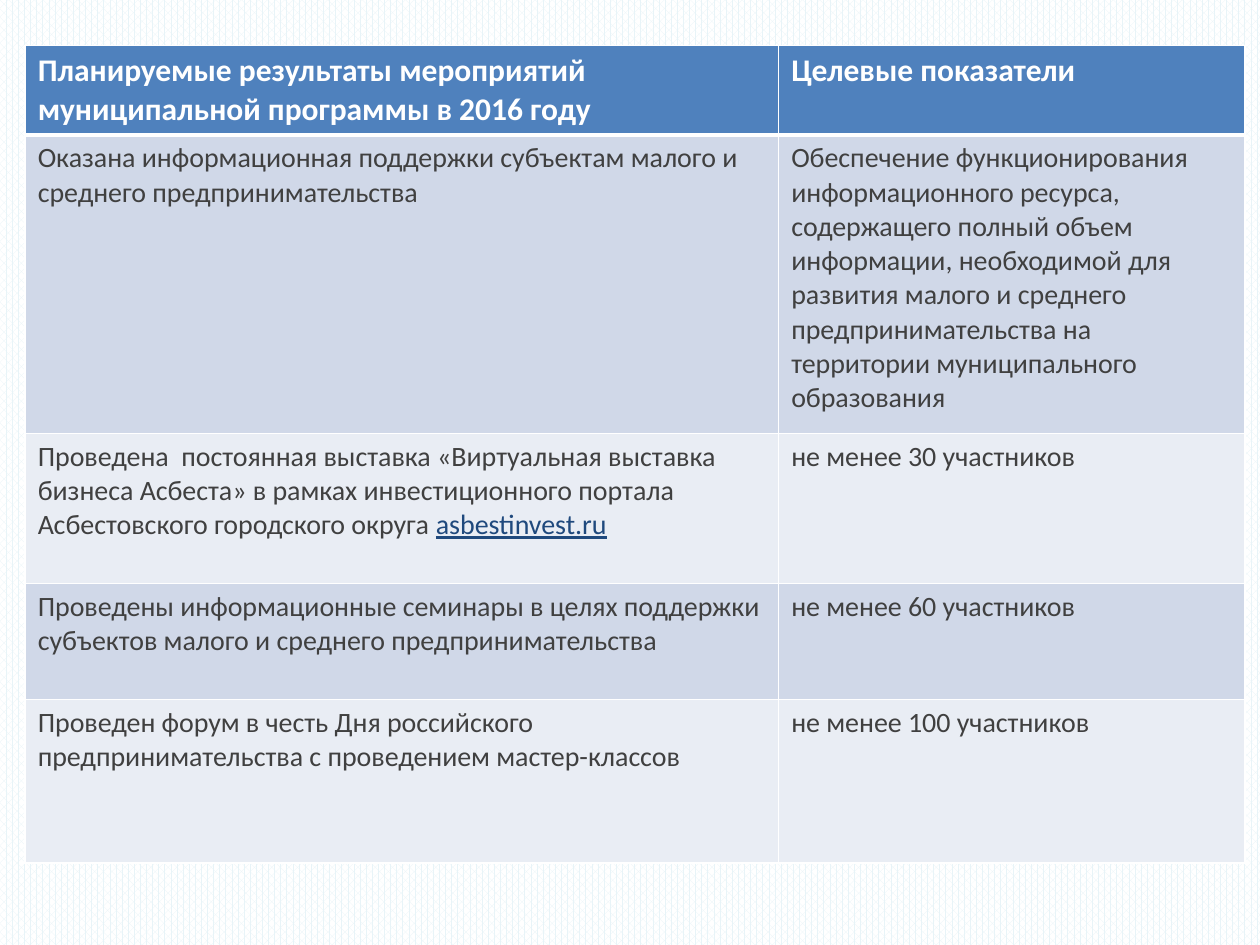
from lxml import etree
from pptx import Presentation
from pptx import util as u
from pptx.dml.color import RGBColor
from pptx.enum import dml
from pptx.oxml import ns

COLORS = {
    "header": "4F81BD", "band_dark": "D0D8E8", "band_light": "E9EDF4",
    "white": "FFFFFF", "body": "404040", "link": "1F497D", "pattern": "E8F4F8",
}
HEADER_FONT = {"name": "Calibri", "size": u.Pt(18), "bold": True}
BODY_FONT = {"name": "Calibri", "size": u.Pt(16), "bold": False}
LINK_FONT = {**BODY_FONT, "underline": True}

COLUMN_WIDTHS = [5.98, 3.7]
ROW_HEIGHTS = [0.7, 2.37, 1.19, 0.92, 1.3]
PORTAL = "asbestinvest.ru"
RESULTS = [
    ("Планируемые результаты мероприятий муниципальной программы в 2016 году",
     "Целевые показатели"),
    ("Оказана информационная поддержки субъектам малого и среднего предпринимательства",
     "Обеспечение функционирования информационного ресурса, содержащего полный объем "
     "информации, необходимой для развития малого и среднего предпринимательства на "
     "территории муниципального образования"),
    ("Проведена  постоянная выставка «Виртуальная выставка бизнеса Асбеста» в рамках "
     "инвестиционного портала Асбестовского городского округа " + PORTAL,
     "не менее 30 участников"),
    ("Проведены информационные семинары в целях поддержки субъектов малого и среднего "
     "предпринимательства", "не менее 60 участников"),
    ("Проведен форум в честь Дня российского предпринимательства с проведением "
     "мастер-классов", "не менее 100 участников"),
]


def rgb(name):
    return RGBColor.from_string(COLORS[name])


def add_run(paragraph, wording, font_format, color):
    run = paragraph.add_run()
    run.text = wording
    for attribute, value in font_format.items():
        setattr(run.font, attribute, value)
    run.font.color.rgb = rgb(color)


def set_borders(cell, widths):
    properties = cell._tc.get_or_add_tcPr()
    for side, width in widths.items():
        line = etree.SubElement(properties, ns.qn(f"a:ln{side}"), w=str(u.Pt(width)))
        fill = etree.SubElement(line, ns.qn("a:solidFill"))
        etree.SubElement(fill, ns.qn("a:srgbClr"), val=COLORS["white"])


def fill_cell(cell, wording, row):
    # White rules, with a thicker one under the header
    set_borders(cell, {"L": 1, "R": 1, "T": 3 if row == 1 else 1, "B": 3 if row == 0 else 1})
    band = "header" if row == 0 else ("band_light", "band_dark")[row % 2]
    cell.fill.solid()
    cell.fill.fore_color.rgb = rgb(band)

    # Wording, with the portal address set apart
    paragraph = cell.text_frame.paragraphs[0]
    if row == 0:
        add_run(paragraph, wording, HEADER_FONT, "white")
        return
    before, address, _ = wording.partition(PORTAL)
    add_run(paragraph, before, BODY_FONT, "body")
    if address:
        add_run(paragraph, address, LINK_FONT, "link")


def add_results_table(slide, left, top):
    width, height = sum(COLUMN_WIDTHS), sum(ROW_HEIGHTS)
    box = [u.Inches(length) for length in (left, top, width, height)]
    results = slide.shapes.add_table(len(RESULTS), len(COLUMN_WIDTHS), *box).table
    for column, column_width in zip(results.columns, COLUMN_WIDTHS):
        column.width = u.Inches(column_width)
    for row, (wordings, row_height) in enumerate(zip(RESULTS, ROW_HEIGHTS)):
        results.rows[row].height = u.Inches(row_height)
        for column, wording in enumerate(wordings):
            fill_cell(results.cell(row, column), wording, row)


def set_background(slide):
    fill = slide.background.fill
    fill.patterned()
    fill.pattern = dml.MSO_PATTERN.PERCENT_70
    fill.fore_color.rgb = rgb("pattern")
    fill.back_color.rgb = rgb("white")


def main():
    deck = Presentation()
    deck.slide_width, deck.slide_height = u.Inches(10), u.Inches(7.5)
    slide = deck.slides.add_slide(deck.slide_layouts[6])
    set_background(slide)
    add_results_table(slide, 0.2, 0.36)
    deck.save("out.pptx")


if __name__ == "__main__":
    main()
